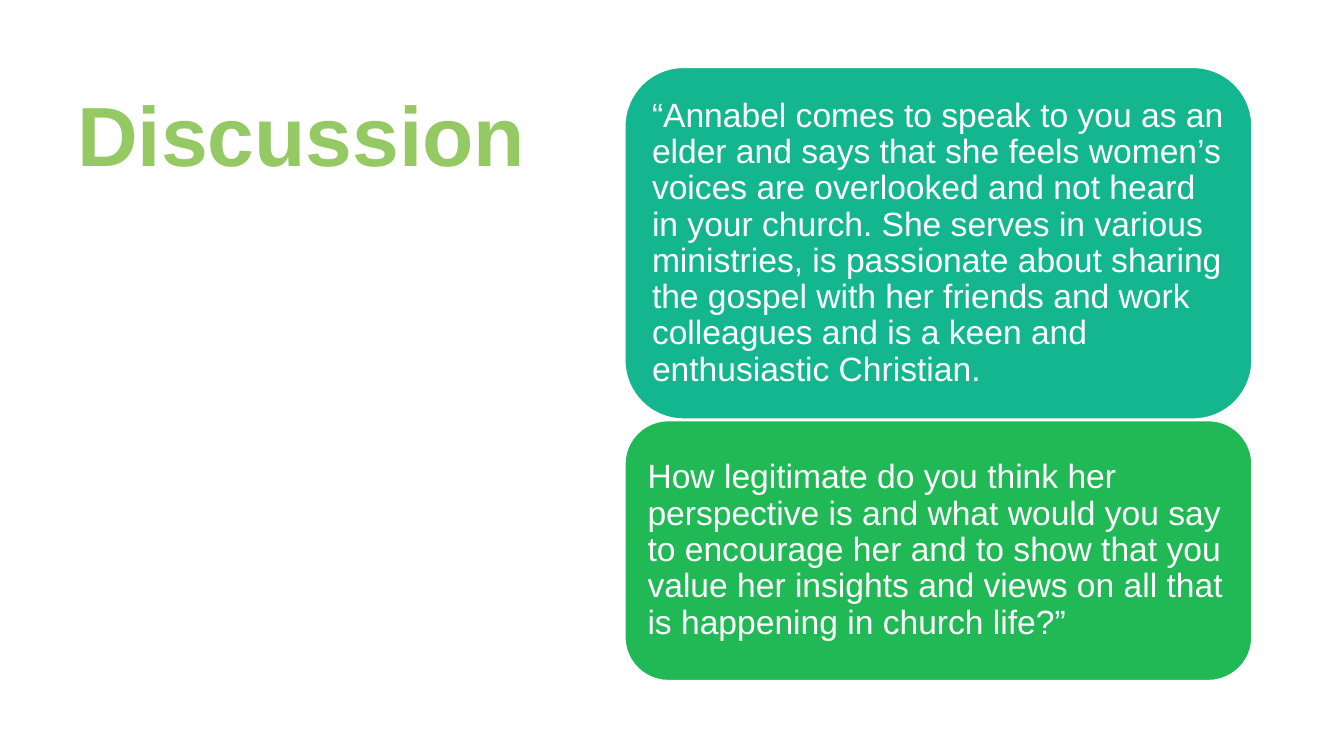
import pptx
import pptx.util
import pptx.dml.color
import pptx.enum.shapes
import pptx.enum.text

Cm = pptx.util.Cm
Pt = pptx.util.Pt
RGB = pptx.dml.color.RGBColor.from_string

colours = {"title": "95C964", "scenario": "14B690", "question": "21B856", "white": "FFFFFF"}
frame_format = {
    "word_wrap": True,
    "vertical_anchor": pptx.enum.text.MSO_ANCHOR.MIDDLE,
    "margin_left": Cm(0.25),
    "margin_right": Cm(0.25),
}
paragraph_format = {"alignment": pptx.enum.text.PP_ALIGN.LEFT, "line_spacing": 0.9}


def write(shape, wording, size, colour, bold, margin):
    frame = shape.text_frame
    margins = {"margin_top": Cm(margin), "margin_bottom": Cm(margin)}
    for name, value in (frame_format | margins).items():
        setattr(frame, name, value)
    paragraph = frame.paragraphs[0]
    paragraph.text = wording
    for name, value in paragraph_format.items():
        setattr(paragraph, name, value)
    font = paragraph.runs[0].font
    for name, value in {"name": "Arial", "size": Pt(size), "bold": bold}.items():
        setattr(font, name, value)
    font.color.rgb = RGB(colours[colour])


deck = pptx.Presentation()
deck.slide_width = Cm(33.87)
deck.slide_height = Cm(19.05)
slide = deck.slides.add_slide(deck.slide_layouts[6])

discussion = slide.shapes.add_textbox(Cm(1.7), Cm(1.7), Cm(12.34), Cm(3.6))
write(discussion, "Discussion", 60, "title", True, 0.13)

cards = [
    ("scenario", 1.7, 8.86,
     "“Annabel comes to speak to you as an elder and says that she feels women’s voices are "
     "overlooked and not heard in your church. She serves in various ministries, is passionate "
     "about sharing the gospel with her friends and work colleagues and is a keen and "
     "enthusiastic Christian."),
    ("question", 10.6, 6.55,
     "How legitimate do you think her perspective is and what would you say to encourage her "
     "and to show that you value her insights and views on all that is happening in church life?”"),
]
for part, top, height, wording in cards:
    card = slide.shapes.add_shape(
        pptx.enum.shapes.MSO_SHAPE.ROUNDED_RECTANGLE, Cm(15.75), Cm(top), Cm(15.8), Cm(height))
    card.shadow.inherit = False
    card.fill.solid()
    card.fill.fore_color.rgb = RGB(colours[part])
    card.line.color.rgb = RGB(colours["white"])
    card.line.width = Pt(1)
    write(card, wording, 24, "white", False, 0.25)

deck.save("out.pptx")
